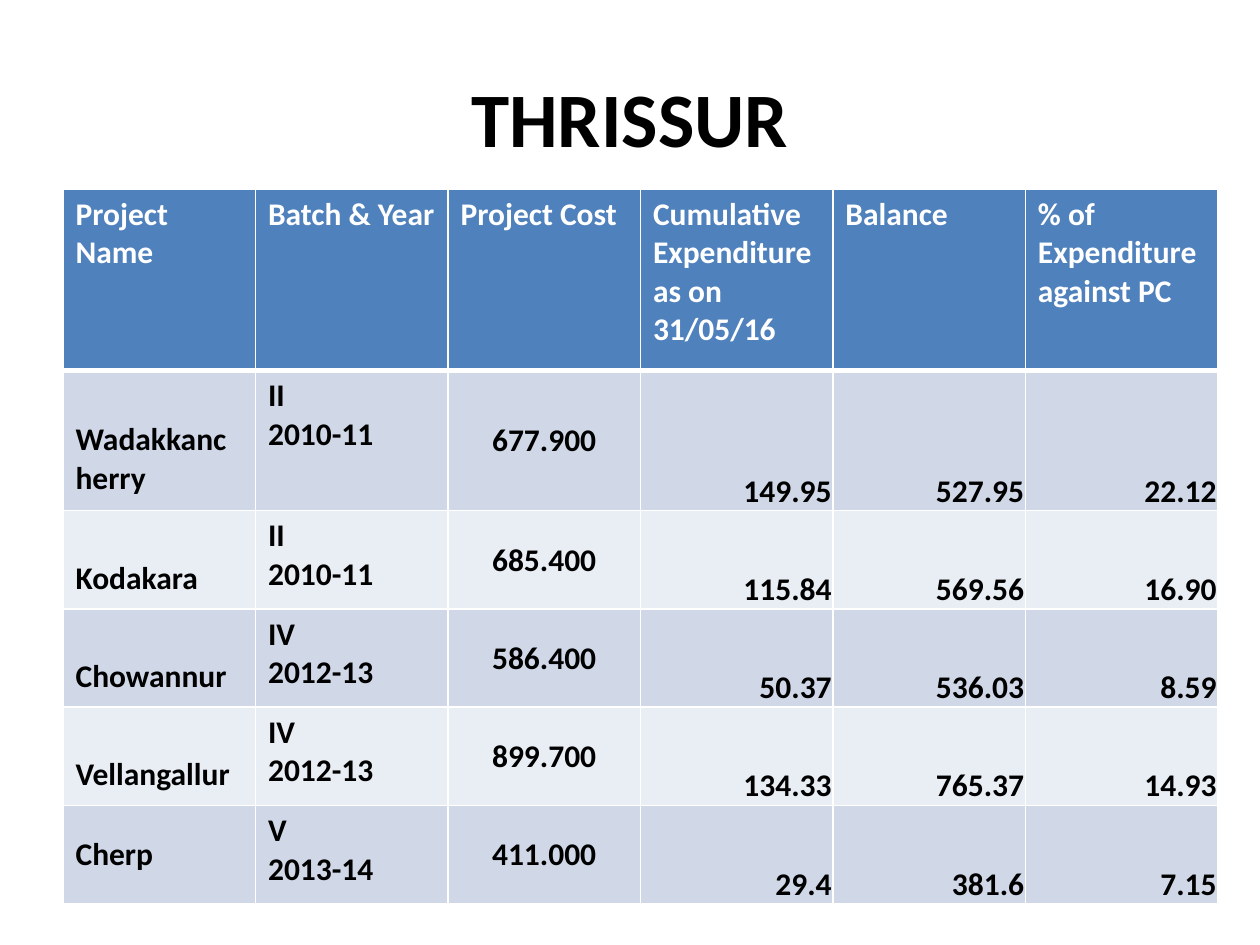
from pptx import Presentation
from pptx.dml.color import RGBColor
from pptx.enum.text import MSO_ANCHOR as ANCHOR, PP_ALIGN as ALIGN
from pptx.oxml.ns import qn
from pptx.util import Pt
from lxml.etree import SubElement

COLORS = {
    "header": "4F81BD",
    "band_dark": "D0D8E8",
    "band_light": "E9EDF4",
    "white": "FFFFFF",
    "black": "000000",
}
HEADERS = ["Project Name", "Batch & Year", "Project Cost",
           "Cumulative Expenditure as on 31/05/16", "Balance",
           "% of Expenditure against PC"]
PROJECTS = [
    ["Wadakkancherry", "II\n2010-11", "677.900", "149.95", "527.95", "22.12"],
    ["Kodakara", "II\n2010-11", "685.400", "115.84", "569.56", "16.90"],
    ["Chowannur", "IV\n2012-13", "586.400", "50.37", "536.03", "8.59"],
    ["Vellangallur", "IV\n2012-13", "899.700", "134.33", "765.37", "14.93"],
    ["Cherp", "V\n2013-14", "411.000", "29.4", "381.6", "7.15"],
]
COL_WIDTH = 110
ROW_HEIGHTS = [103.7, 80] + [56.2] * 4

TEXT = {"align": ALIGN.LEFT, "anchor": ANCHOR.TOP, "margins": (7.2, 3.6, 7.2, 3.6)}
NAME = {**TEXT, "anchor": ANCHOR.MIDDLE}
LOW_NAME = {**NAME, "margins": (7.2, 25.2, 7.2, 3.6)}
COST = {"align": ALIGN.CENTER, "anchor": ANCHOR.MIDDLE, "margins": (0.7, 0.7, 0.7, 0)}
FIGURE = {**COST, "align": ALIGN.RIGHT, "anchor": ANCHOR.BOTTOM}
BODY_STYLES = [LOW_NAME, TEXT, COST, FIGURE, FIGURE, FIGURE]


def rgb(name):
    return RGBColor.from_string(COLORS[name])


def write_text(tf, text, size, color, align):
    tf.word_wrap = True
    tf.text = text
    for p in tf.paragraphs:
        p.alignment = align
        for r in p.runs:
            for attr, value in {"name": "Calibri", "size": Pt(size), "bold": True}.items():
                setattr(r.font, attr, value)
            r.font.color.rgb = rgb(color)


def add_title(slide, text):
    tf = slide.shapes.add_textbox(Pt(36), Pt(21.6), Pt(648), Pt(90)).text_frame
    tf.vertical_anchor = ANCHOR.MIDDLE
    write_text(tf, text, 44, "black", ALIGN.CENTER)


def set_borders(cell, top, bottom):
    tc_pr = cell._tc.get_or_add_tcPr()
    for side, width in {"L": 1, "R": 1, "T": top, "B": bottom}.items():
        ln = SubElement(tc_pr, qn(f"a:ln{side}"), w=str(Pt(width)))
        fill = SubElement(ln, qn("a:solidFill"))
        SubElement(fill, qn("a:srgbClr"), val=COLORS["white"])


def fill_cell(cell, text, style, fill, color, borders):
    set_borders(cell, *borders)
    cell.fill.solid()
    cell.fill.fore_color.rgb = rgb(fill)
    cell.vertical_anchor = style["anchor"]
    for side, margin in zip(("left", "top", "right", "bottom"), style["margins"]):
        setattr(cell, f"margin_{side}", Pt(margin))
    write_text(cell.text_frame, text, 18, color, style["align"])


def add_project_table(slide):
    rows, cols = len(ROW_HEIGHTS), len(HEADERS)
    table = slide.shapes.add_table(rows, cols, Pt(36), Pt(108), Pt(COL_WIDTH * cols),
                                   Pt(sum(ROW_HEIGHTS))).table
    for col in table.columns:
        col.width = Pt(COL_WIDTH)
    for row, height in zip(table.rows, ROW_HEIGHTS):
        row.height = Pt(height)
    for c, header in enumerate(HEADERS):
        fill_cell(table.cell(0, c), header, TEXT, "header", "white", (1, 3))
    for i, project in enumerate(PROJECTS, 1):
        band = "band_dark" if i % 2 else "band_light"
        borders = (3 if i == 1 else 1, 1)
        for c, (text, style) in enumerate(zip(project, BODY_STYLES)):
            if text == "Cherp":
                style = NAME
            fill_cell(table.cell(i, c), text, style, band, "black", borders)


def main():
    prs = Presentation()
    prs.slide_width, prs.slide_height = Pt(720), Pt(540)
    s = prs.slides.add_slide(prs.slide_layouts[6])
    add_title(s, "THRISSUR")
    add_project_table(s)
    prs.save("out.pptx")


if __name__ == "__main__":
    main()
